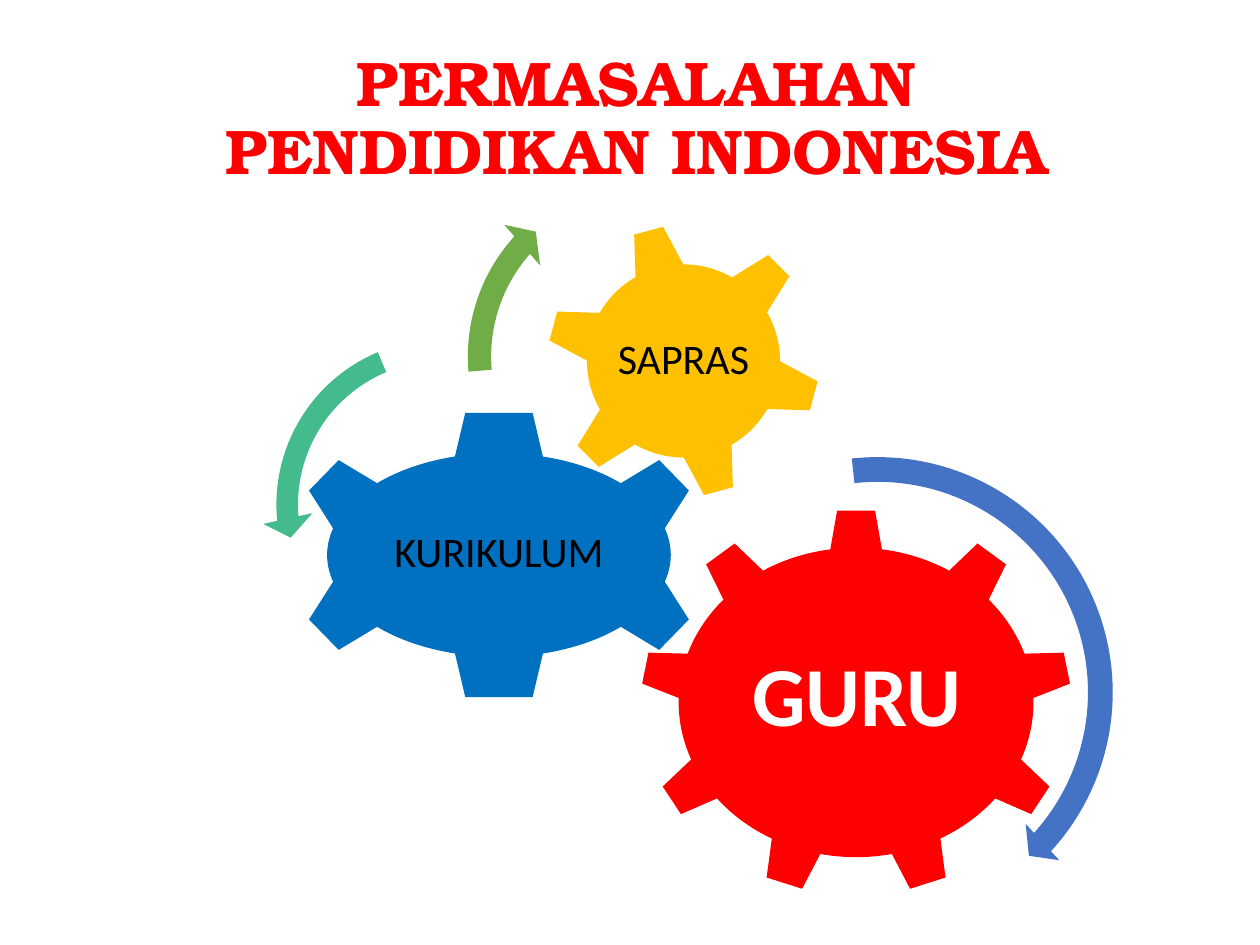
from pptx import Presentation
from pptx.dml.color import RGBColor
from pptx.enum.shapes import MSO_SHAPE as Shape
from pptx.enum.text import MSO_ANCHOR as Anchor, PP_ALIGN as Align
from pptx.util import Pt

PX = 9144
SLIDE_SIZE = (1000, 750)

TITLE = ("PERMASALAHAN\vPENDIDIKAN INDONESIA", (55, 44, 900, 102),
         "TeX Gyre Bonum", 36, True, "FF0000", (10, 5))

GEARS = [
    (Shape.GEAR_9, (508, 404, 343, 307), 0, "FF0000",
     ("GURU", (575, 476, 210, 158), "Calibri", 48, True, "FFFFFF", (7, 7))),
    (Shape.GEAR_6, (225, 325, 342, 231), 0, "0070C0",
     ("KURIKULUM", (299, 383, 194, 114), "Calibri", 24, False, "000000", (3, 3))),
    (Shape.GEAR_6, (433, 177, 219, 219), 345, "FFC000",
     ("SAPRAS", (481, 225, 123, 123), "Calibri", 24, False, "000000", (3, 3))),
]

ARROWS = [
    (Shape.CIRCULAR_ARROW, (500, 353, 393, 393), "4472C4",
     (0.05, 2.99, 25.34, 158.23, 0.05)),
    (Shape.LEFT_CIRCULAR_ARROW, (208, 258, 285, 285), "43BB8D",
     (0.06, 4.3, 104.89, 148.38, 0.07)),
    (Shape.CIRCULAR_ARROW, (359, 129, 308, 308), "70AD47",
     (0.06, 3.94, 133.14, 105.08, 0.07)),
]


def color(value):
    return RGBColor.from_string(value)


def emu(lengths):
    return [length * PX for length in lengths]


def add_shape(slide, kind, box, fill):
    shape = slide.shapes.add_shape(kind, *emu(box))
    shape.shadow.inherit = False
    shape.fill.solid()
    shape.fill.fore_color.rgb = color(fill)
    shape.line.fill.background()
    return shape


def add_label(slide, text, box, font_name, size, bold, text_color, insets):
    frame = slide.shapes.add_textbox(*emu(box)).text_frame
    frame.word_wrap = True
    frame.vertical_anchor = Anchor.MIDDLE
    side, top = emu(insets)
    frame.margin_left = frame.margin_right = side
    frame.margin_top = frame.margin_bottom = top
    paragraph = frame.paragraphs[0]
    paragraph.text = text
    paragraph.alignment = Align.CENTER
    paragraph.line_spacing = 0.9
    font = paragraph.font
    font.name, font.size, font.bold = font_name, Pt(size), bold
    font.color.rgb = color(text_color)


def main():
    presentation = Presentation()
    presentation.slide_width, presentation.slide_height = emu(SLIDE_SIZE)
    slide = presentation.slides.add_slide(presentation.slide_layouts[6])

    add_label(slide, *TITLE)
    for kind, box, rotation, fill, label in GEARS:
        add_shape(slide, kind, box, fill).rotation = rotation
        add_label(slide, *label)
    for kind, box, fill, adjustments in ARROWS:
        arrow = add_shape(slide, kind, box, fill)
        for index, value in enumerate(adjustments):
            arrow.adjustments[index] = value

    presentation.save("out.pptx")


if __name__ == "__main__":
    main()
